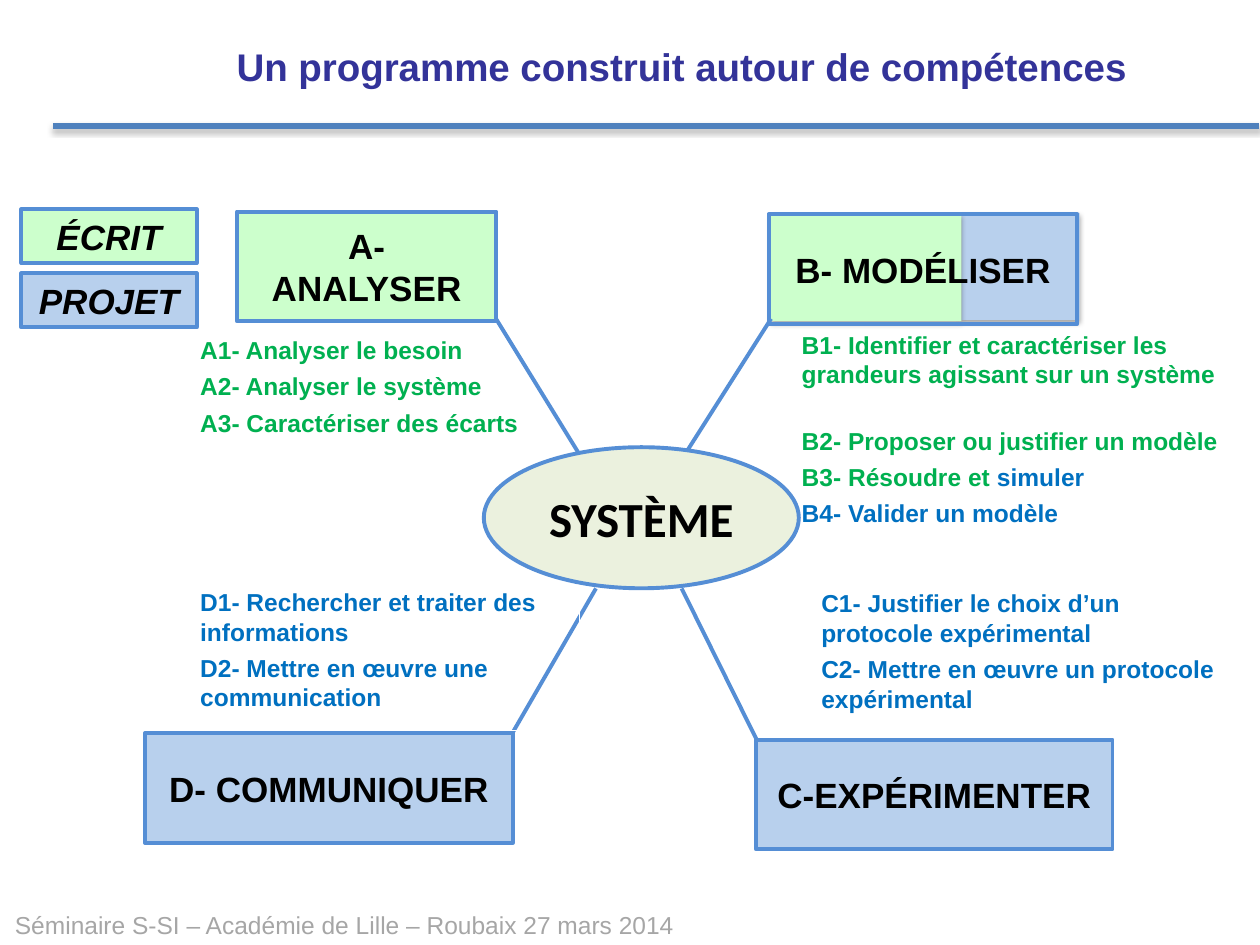
"""Build a slide on the skills of a science syllabus, placed in percent of the slide."""
from lxml import etree
from pptx import Presentation
from pptx import util as u
from pptx.dml.color import RGBColor
from pptx.enum import shapes, text
from pptx.oxml.ns import qn

THEME = {
    "ink": "000000", "title": "333399", "foot": "A6A6A6", "white": "FFFFFF",
    "green": "00B050", "blue": "0070C0", "mint": "CCFFCC", "sky": "B8D0ED",
    "cream": "EBF1DE", "edge": "558ED5", "rule": "4F81BD",
    "big": 28, "head": 22, "box": 20, "body": 14,
    "font": "Arial", "hub": "Calibri", "thick": 3.2, "line": 2.25, "thin": 0.75,
}
RULE = (4.2, 13.33, 99.9, 13.33)
TITLE = ("Un programme construit autour de compétences", (17.8, 3.87, 76.3, 6.27))
FOOT = ("Séminaire S-SI – Académie de Lille – Roubaix 27 mars 2014",
        (0.2, 95.6, 54.7, 4.53))
HALVES = [("sky", (76.3, 22.53, 9.4, 11.33)), ("mint", (61.2, 22.67, 15.1, 11.33))]
HUB = ("SYSTÈME", (38.4, 47.33, 25, 14.93))
SPOKES = [
    (38.2, 31.2, 47.3, 50.93), (61.2, 33.73, 53, 50.93),
    (40.6, 77.73, 47.3, 62.27), (60.1, 78.4, 54.1, 62.27),
]
BOXES = [
    ("A- ANALYSER", "mint", (18.8, 22.4, 20.6, 11.6), False),
    ("C-EXPÉRIMENTER", "sky", (60, 78.27, 28.3, 11.6), False),
    ("D- COMMUNIQUER", "sky", (11.5, 77.6, 29.2, 11.6), False),
    ("B- MODÉLISER", None, (61, 22.67, 24.5, 11.6), False),
    ("ÉCRIT", "mint", (1.7, 22.13, 13.9, 5.73), True),
    ("PROJET", "sky", (1.7, 28.93, 13.9, 5.73), True),
]
SKILLS = [
    ((62.65, 34.27, 36, 25.73), None, [
        ([("B1- Identifier et caractériser les\vgrandeurs agissant sur un système",
           "green")], 21),
        ([("B2- Proposer ou justifier un modèle", "green")], 4),
        ([("B3- Résoudre et ", "green"), ("simuler", "blue")], 4),
        ([("B4- Valider un modèle", "blue")], 4)]),
    ((64.2, 61.6, 33.7, 15.6), None, [
        ([("C1- Justifier le choix d’un protocole expérimental", "blue")], 4),
        ([("C2- Mettre en œuvre un protocole expérimental", "blue")], 4)]),
    ((14.9, 34.8, 29.1, 14.4), None, [
        ([("A1- Analyser le besoin", "green")], 4),
        ([("A2- Analyser le système", "green")], 4),
        ([("A3- Caractériser des écarts", "green")], 4)]),
    ((14.9, 61.47, 31.1, 15.87), "white", [
        ([("D1- Rechercher et traiter des informations", "blue")], 4),
        ([("D2- Mettre en œuvre une communication", "blue")], 4)]),
]

deck = Presentation()
deck.slide_width, deck.slide_height = u.Inches(10), u.Inches(7.5)
page = deck.slides.add_slide(deck.slide_layouts[6])


def place(area):
    sides = (deck.slide_width, deck.slide_height) * 2
    return [round(part * side / 100) for part, side in zip(area, sides)]


def tint(name):
    return RGBColor.from_string(THEME[name])


def style(font, size, color, bold=True, face="font", slant=False):
    font.name, font.size = THEME[face], u.Pt(THEME[size])
    font.bold, font.italic = bold, slant
    font.color.rgb = tint(color)


def shade(item):
    props = item._element.spPr
    for old in props.findall(qn("a:effectLst")):
        props.remove(old)
    glow = etree.SubElement(etree.SubElement(props, qn("a:effectLst")),
                            qn("a:outerShdw"), blurRad="39400", dist="23000",
                            dir="5400000", rotWithShape="0")
    black = etree.SubElement(glow, qn("a:srgbClr"), val="000000")
    etree.SubElement(black, qn("a:alpha"), val="35000")


def draw_line(ends, color, width):
    line = page.shapes.add_connector(shapes.MSO_CONNECTOR.STRAIGHT, *place(ends))
    line.line.color.rgb, line.line.width = tint(color), u.Pt(THEME[width])
    etree.SubElement(line._element.spPr, qn("a:effectLst"))
    return line


def draw_box(area, fill=None, edge=None, width="line", kind="RECTANGLE"):
    box = page.shapes.add_shape(shapes.MSO_SHAPE[kind], *place(area))
    box.shadow.inherit = False
    if fill:
        box.fill.solid()
        box.fill.fore_color.rgb = tint(fill)
    else:
        box.fill.background()
    if edge:
        box.line.color.rgb, box.line.width = tint(edge), u.Pt(THEME[width])
    else:
        box.line.fill.background()
    return box


def label(box, words, size, **look):
    frame = box.text_frame
    frame.word_wrap = True
    frame.vertical_anchor = text.MSO_ANCHOR.MIDDLE
    para = frame.paragraphs[0]
    para.text, para.alignment = words, text.PP_ALIGN.CENTER
    style(para.font, size, "ink", **look)


def write(area, words, size, color, bold, wrap):
    frame = page.shapes.add_textbox(*place(area)).text_frame
    frame.word_wrap = wrap
    para = frame.paragraphs[0]
    para.text = words
    style(para.font, size, color, bold)


def list_skills(area, edge, rows):
    if edge:
        box = draw_box(area, edge=edge, width="thin")
    else:
        box = page.shapes.add_textbox(*place(area))
    frame = box.text_frame
    frame.word_wrap = True
    frame.vertical_anchor = text.MSO_ANCHOR.TOP
    for num, (runs, gap) in enumerate(rows):
        para = frame.add_paragraph() if num else frame.paragraphs[0]
        para.alignment, para.space_after = text.PP_ALIGN.LEFT, u.Pt(gap)
        if len(runs) == 1:
            para.text = runs[0][0]
            style(para.font, "body", runs[0][1])
            continue
        for words, color in runs:
            run = para.add_run()
            run.text = words
            style(run.font, "body", color)


shade(draw_line(RULE, "rule", "thick"))
write(FOOT[1], FOOT[0], "body", "foot", False, False)
for fill, area in HALVES:
    shade(draw_box(area, fill))
for ends in SPOKES:
    draw_line(ends, "edge", "line")
for group in SKILLS:
    list_skills(*group)
label(draw_box(HUB[1], "cream", "edge", kind="OVAL"), HUB[0], "big", face="hub")
for words, fill, area, slant in BOXES:
    label(draw_box(area, fill, "edge"), words, "box", slant=slant)
write(TITLE[1], TITLE[0], "head", "title", True, True)

deck.save("out.pptx")
